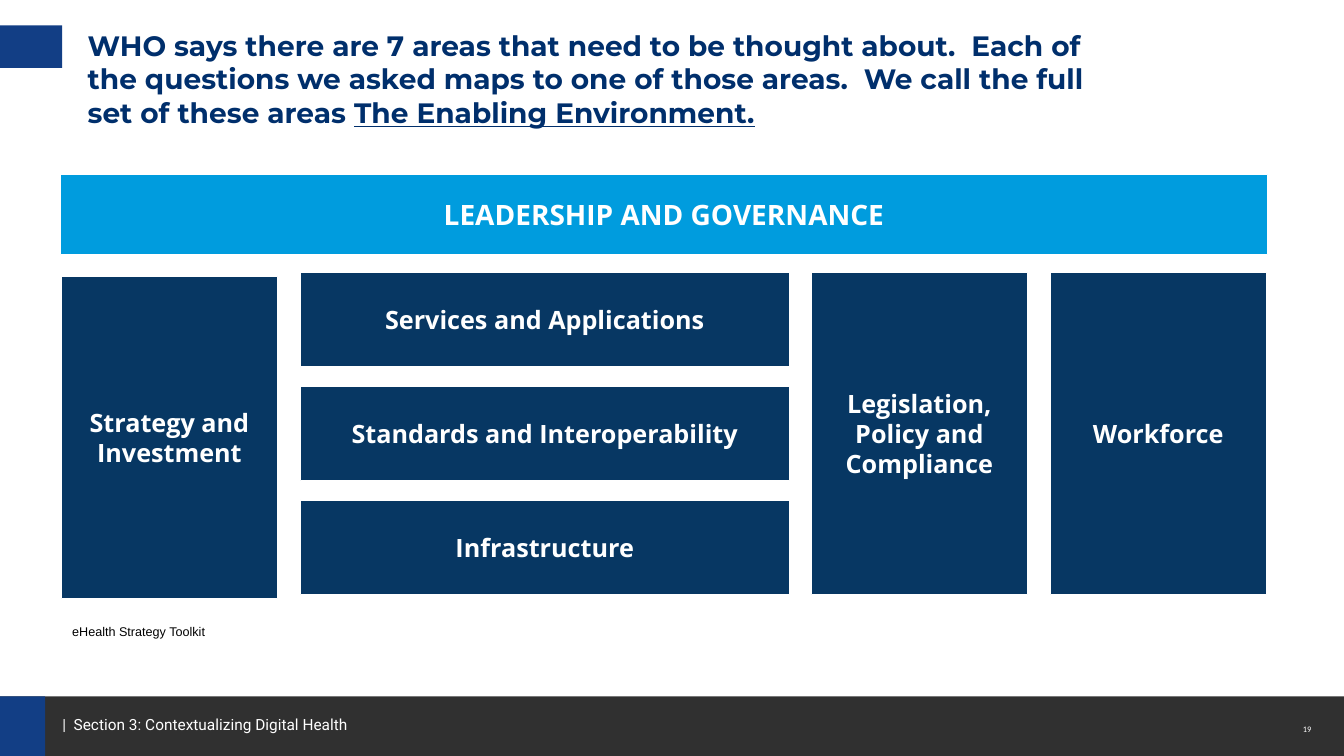
from dataclasses import dataclass

from pptx import Presentation
from pptx.dml.color import RGBColor
from pptx.enum.shapes import MSO_SHAPE
from pptx.enum.text import MSO_ANCHOR as Anchor, MSO_AUTO_SIZE, PP_ALIGN as Align
from pptx.util import Cm, Pt


@dataclass(frozen=True)
class Theme:
    white: str = "FFFFFF"
    black: str = "000000"
    charcoal: str = "303030"
    royal: str = "123E85"
    navy: str = "073763"
    sky: str = "009CDE"
    heading: str = "002F6C"
    title_size: float = 20
    area_size: float = 18
    section_size: float = 11
    credit_size: float = 9
    number_size: float = 6
    title_font: str = "Montserrat"
    area_font: str = "Open Sans"
    section_font: str = "Roboto"
    credit_font: str = "Arial"
    number_font: str = "Calibri"


THEME = Theme()


def set_frame(tf, anchor, inset_x, inset_y):
    tf.word_wrap = True
    tf.auto_size = MSO_AUTO_SIZE.NONE
    tf.vertical_anchor = anchor
    tf.margin_left = tf.margin_right = Cm(inset_x)
    tf.margin_top = tf.margin_bottom = Cm(inset_y)


def style(p, font, size, color, bold=False, align=Align.LEFT):
    p.alignment = align
    p.font.name = font
    p.font.size = Pt(size)
    p.font.bold = bold
    p.font.color.rgb = RGBColor.from_string(color)


def add_rect(s, box, fill):
    sp = s.shapes.add_shape(MSO_SHAPE.RECTANGLE, *map(Cm, box))
    sp.shadow.inherit = False
    sp.fill.solid()
    sp.fill.fore_color.rgb = RGBColor.from_string(fill)
    sp.line.fill.background()
    return sp


def add_area(s, box, lines, fill=THEME.navy, size=THEME.area_size):
    sp = add_rect(s, box, fill)
    sp.line.color.rgb = RGBColor.from_string(THEME.white)
    sp.line.width = Pt(0.75)
    tf = sp.text_frame
    set_frame(tf, Anchor.MIDDLE, 0.25, 0.25)
    tf.text = "\n".join(lines)
    for p in tf.paragraphs:
        style(p, THEME.area_font, size, THEME.white, True, Align.CENTER)


def add_label(s, box, text, font, size, color, inset=(0.25, 0.13),
              anchor=Anchor.TOP, align=Align.LEFT):
    tf = s.shapes.add_textbox(*map(Cm, box)).text_frame
    set_frame(tf, anchor, *inset)
    tf.text = text
    style(tf.paragraphs[0], font, size, color, align=align)


def add_title(s, box, text, underlined):
    sp = s.shapes.title
    sp.left, sp.top, sp.width, sp.height = map(Cm, box)
    tf = sp.text_frame
    set_frame(tf, Anchor.TOP, 0.25, 0.25)
    p = tf.paragraphs[0]
    style(p, THEME.title_font, THEME.title_size, THEME.heading, True)
    p.add_run().text = text
    r = p.add_run()
    r.text = underlined
    r.font.underline = True


def add_footer(s):
    add_rect(s, (0, 17.55, 33.87, 1.5), THEME.charcoal)
    add_rect(s, (0, 17.55, 1.14, 1.5), THEME.royal)
    add_label(s, (25.4, 18.11, 7.9, 0.51), "19", THEME.number_font,
              THEME.number_size, THEME.white, anchor=Anchor.MIDDLE, align=Align.RIGHT)
    add_label(s, (1.57, 18.01, 7.9, 0.51), "|  Section 3: Contextualizing Digital Health",
              THEME.section_font, THEME.section_size, THEME.white, inset=(0, 0))


def add_areas(s):
    add_area(s, (1.52, 4.39, 30.43, 2.03), ["LEADERSHIP AND GOVERNANCE"],
             THEME.sky, THEME.title_size)
    columns = [
        (1.55, 6.96, ["Strategy and", "Investment"]),
        (20.45, 6.86, ["Legislation,", "Policy and", "Compliance"]),
        (26.47, 6.86, ["Workforce"]),
    ]
    for left, top, lines in columns:
        add_area(s, (left, top, 5.44, 8.13), lines)
    layers = ["Services and Applications", "Standards and Interoperability", "Infrastructure"]
    for i, layer in enumerate(layers):
        add_area(s, (7.57, 6.86 + i * 2.87, 12.32, 2.39), [layer])


def main():
    prs = Presentation()
    prs.slide_width, prs.slide_height = Cm(33.87), Cm(19.05)
    s = prs.slides.add_slide(prs.slide_layouts[5])
    add_footer(s)
    add_title(s, (1.96, 0.46, 26.77, 3.4),
              "WHO says there are 7 areas that need to be thought about.  Each of the "
              "questions we asked maps to one of those areas.  We call the full set of "
              "these areas ", "The Enabling Environment.")
    add_rect(s, (0, 0.64, 1.57, 1.07), THEME.royal)
    add_areas(s)
    add_label(s, (1.57, 15.6, 28.78, 0.64), "eHealth Strategy Toolkit",
              THEME.credit_font, THEME.credit_size, THEME.black)
    prs.save("out.pptx")


if __name__ == "__main__":
    main()
